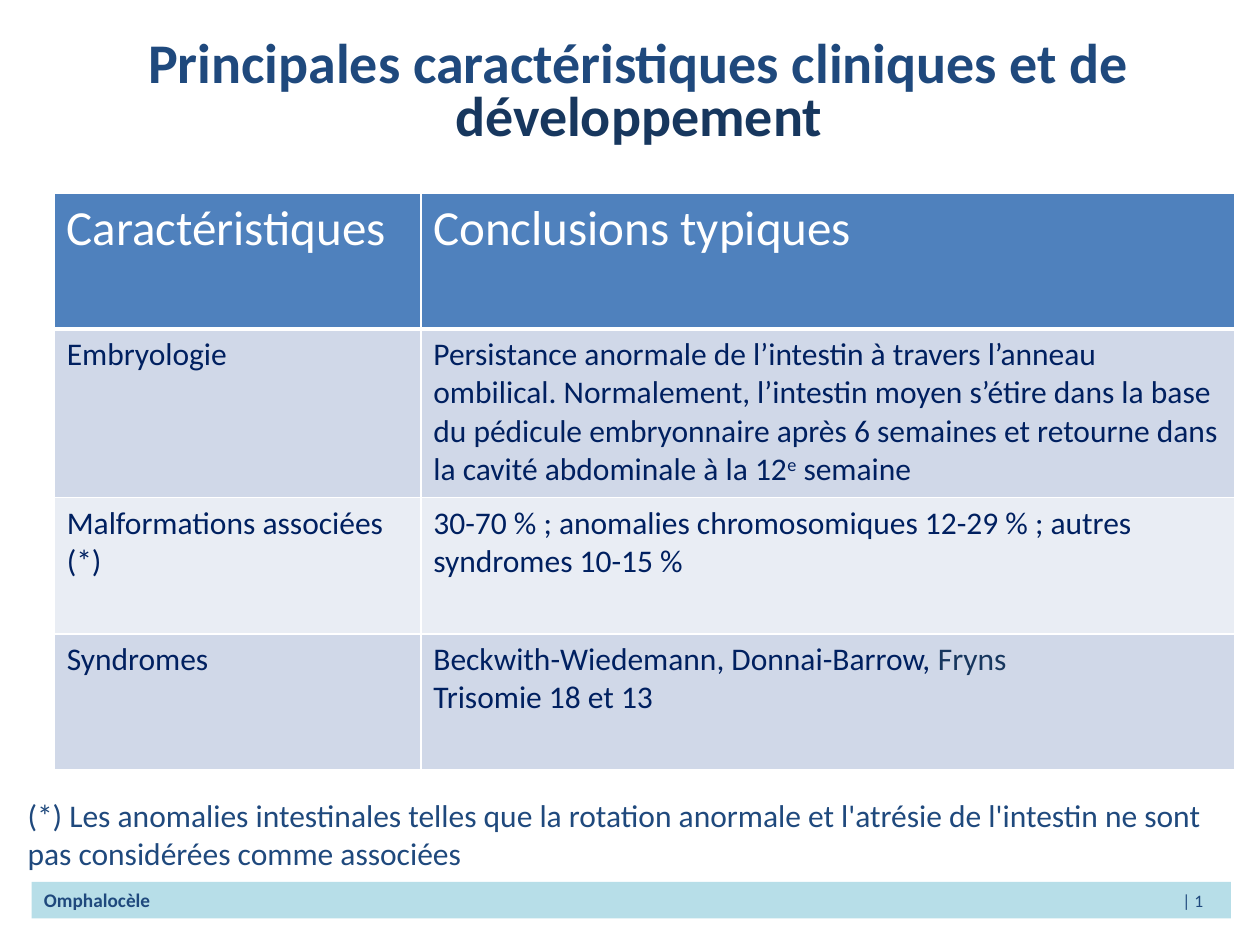
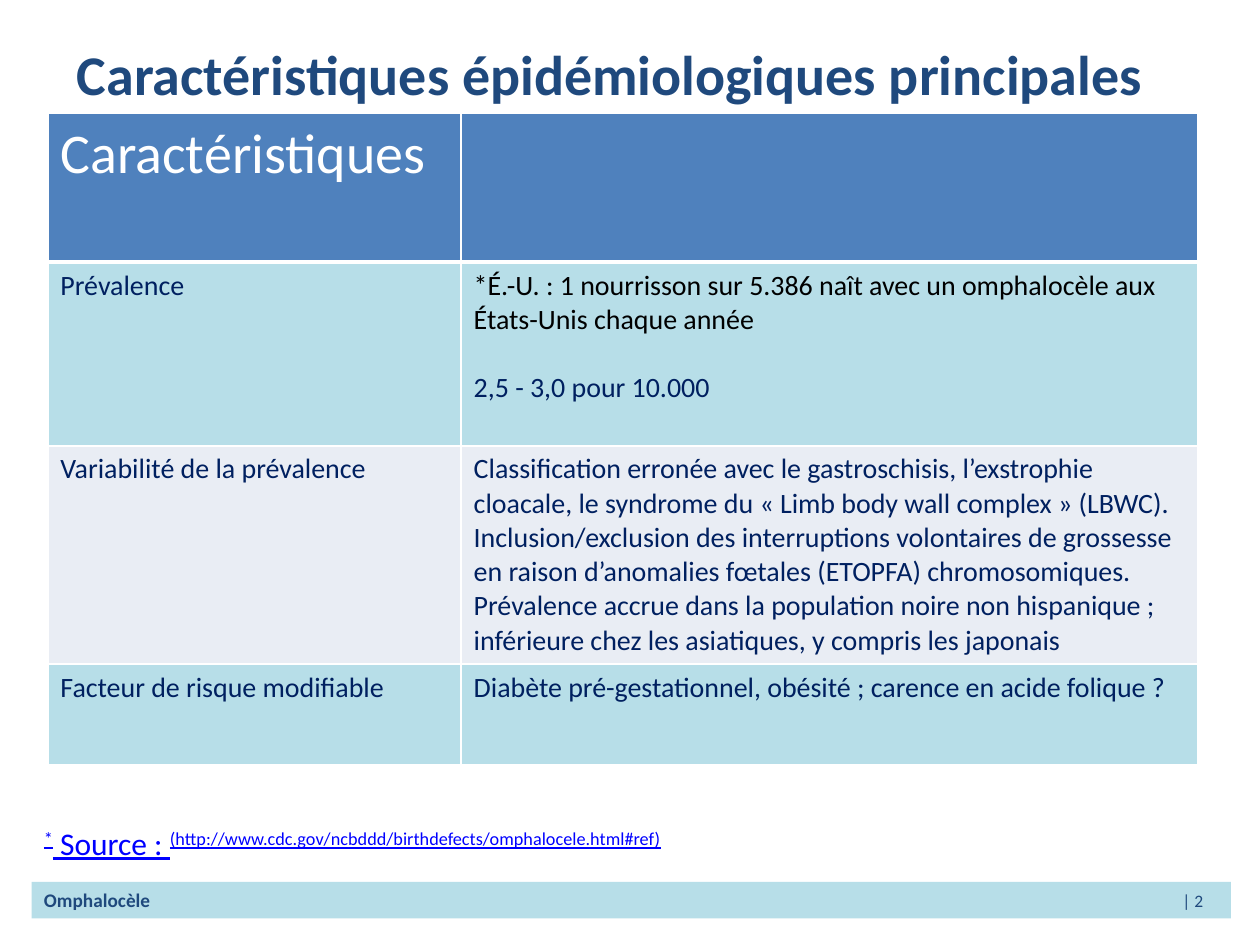
from dataclasses import dataclass
from typing import NamedTuple

from lxml.etree import SubElement as Sub
from pptx import Presentation
from pptx.dml.color import RGBColor
from pptx.enum.shapes import MSO_SHAPE as Shape
from pptx.enum.text import MSO_ANCHOR as Anchor, MSO_AUTO_SIZE as Fit, PP_ALIGN as Align
from pptx.oxml.ns import qn
from pptx.util import Emu, Inches, Pt

WIDE, HIGH = Inches(10), Inches(7.5)
FONT = "Calibri"
BLUE, DARK, NAVY = "1F497D", "17375E", "002060"
HEAD, AQUA, PALE, MIST = "4F81BD", "B7DEE8", "E9EDF4", "D0D8E8"
WHITE, BLACK, LINK = "FFFFFF", "000000", "0000FF"


class Bit(NamedTuple):
    text: str
    color: str = ""  # empty: colour of the block
    up: bool = False


class Box(NamedTuple):
    """Percent of the slide's width and height."""
    left: float
    top: float
    width: float
    height: float


class Style(NamedTuple):
    size: float
    color: str
    bold: bool = False
    line: bool = False


Para = tuple[Bit, ...]


@dataclass
class Grid:
    left: float
    top: float
    cols: tuple[float, ...]
    rows: tuple[float, ...]
    head: float
    body: float
    band: str
    cells: list[list[list[Para]]]
    gap: float = 0  # points between the paragraphs of the first body row


@dataclass
class Page:
    title: Para
    spot: Box
    align: Align
    grid: Grid
    note: Para
    place: Box
    look: Style


def rgb(code: str) -> RGBColor:
    return RGBColor.from_string(code)


def across(share: float) -> Emu:
    return Emu(round(WIDE * share / 100))


def down(share: float) -> Emu:
    return Emu(round(HIGH * share / 100))


def lay(box: Box) -> tuple[Emu, Emu, Emu, Emu]:
    return across(box.left), down(box.top), across(box.width), down(box.height)


def one(text: str, color: str = "") -> list[Para]:
    return [(Bit(text, color),)]


def write(frame, paras: list[Para], style: Style) -> None:
    frame.word_wrap = True
    for i, bits in enumerate(paras):
        para = frame.add_paragraph() if i else frame.paragraphs[0]
        for bit in bits:
            run = para.add_run()
            run.text = bit.text
            font = run.font
            font.name, font.size, font.bold = FONT, Pt(style.size), style.bold
            font.color.rgb = rgb(bit.color or style.color)
            if style.line:
                font.underline = True
            if bit.up:
                run._r.get_or_add_rPr().set("baseline", "30000")


def edge(cell, low: float) -> None:
    """White borders, with the bottom one `low` points wide."""
    props = cell._tc.get_or_add_tcPr()
    for side, width in zip("LRTB", (1, 1, 1, low)):
        line = Sub(props, qn(f"a:ln{side}"), w=str(Pt(width)))
        Sub(Sub(line, qn("a:solidFill")), qn("a:srgbClr"), val=WHITE)


def add_grid(slide, grid: Grid) -> None:
    box = Box(grid.left, grid.top, sum(grid.cols), sum(grid.rows))
    table = slide.shapes.add_table(len(grid.rows), len(grid.cols), *lay(box)).table
    table.first_row = table.horz_banding = False
    for col, share in zip(table.columns, grid.cols):
        col.width = across(share)
    for r, (row, share) in enumerate(zip(table.rows, grid.rows)):
        row.height = down(share)
        style = Style(grid.body, NAVY) if r else Style(grid.head, WHITE)
        tint = (grid.band if r % 2 else PALE if r == 2 else grid.band) if r else HEAD
        for cell, paras in zip(row.cells, grid.cells[r]):
            edge(cell, 1 if r else 3)
            cell.fill.solid()
            cell.fill.fore_color.rgb = rgb(tint)
            write(cell.text_frame, paras, style)
            if r == 1:
                for para in cell.text_frame.paragraphs[1:]:
                    para.space_before = Pt(grid.gap)


def add_foot(slide, num: int) -> None:
    bar = slide.shapes.add_shape(Shape.RECTANGLE, *lay(Box(2.5, 93.33, 95.2, 3.87)))
    bar.shadow.inherit = False
    bar.fill.solid()
    bar.fill.fore_color.rgb = rgb(AQUA)
    bar.line.fill.background()
    para = bar.text_frame.paragraphs[0]
    para.text = f"Omphalocèle\t| {num}"
    para.alignment = Align.LEFT
    tabs = Sub(para._p.get_or_add_pPr(), qn("a:tabLst"))
    Sub(tabs, qn("a:tab"), pos=str(across(92)), algn="r")
    name, mark = para.text.split("\t")
    para.clear()
    write(bar.text_frame, [(Bit(name + "\t"), Bit(mark))], Style(11, BLUE, True))
    last = para.runs[-1].font
    last.size, last.bold = Pt(10), False


def add_title(slide, page: Page) -> None:
    title = slide.shapes.title
    title.left, title.top, title.width, title.height = lay(page.spot)
    frame = title.text_frame
    frame.auto_size, frame.vertical_anchor = Fit.NONE, Anchor.BOTTOM
    write(frame, [page.title], Style(32, BLUE, True))
    para = frame.paragraphs[0]
    para.alignment, para.line_spacing = page.align, Pt(30)


def add_page(deck, page: Page, num: int) -> None:
    slide = deck.slides.add_slide(deck.slide_layouts[5])
    add_foot(slide, num)
    add_title(slide, page)
    add_grid(slide, page.grid)
    note = slide.shapes.add_textbox(*lay(page.place))
    write(note.text_frame, [page.note], page.look)


CLINIC = Grid(4.3, 20.4, (29.1, 64.6), (14.4, 17.87, 14.4, 14.4), 28, 18, MIST, [
    [one("Caractéristiques"), one("Conclusions typiques")],
    [one("Embryologie"),
     [(Bit("Persistance anormale de l’intestin à travers l’anneau ombilical. "
           "Normalement, l’intestin moyen s’étire dans la base du pédicule "
           "embryonnaire après 6 semaines et retourne dans la cavité abdominale "
           "à la 12"), Bit("e", up=True), Bit(" semaine"))]],
    [one("Malformations associées (*)"),
     one("30-70 % ; anomalies chromosomiques 12-29 % ; autres syndromes 10-15 %")],
    [one("Syndromes"),
     [(Bit("Beckwith-Wiedemann, Donnai-Barrow, "), Bit("Fryns", DARK)),
      (Bit("Trisomie 18 et 13"),)]],
])

SPREAD = Grid(3.8, 12, (32.8, 58.5), (15.73, 19.47, 23.07, 10.67), 32, 16, AQUA, [
    [one("Caractéristiques"), []],
    [one("Prévalence"),
     one("*É.-U. : 1 nourrisson sur 5.386 naît avec un omphalocèle aux "
         "États-Unis chaque année", BLACK) + one("2,5 - 3,0 pour 10.000")],
    [one("Variabilité de la prévalence"),
     one("Classification erronée avec le gastroschisis, l’exstrophie cloacale, "
         "le syndrome du « Limb body wall complex » (LBWC). Inclusion/exclusion "
         "des interruptions volontaires de grossesse en raison d’anomalies "
         "fœtales (ETOPFA) chromosomiques.")
     + one("Prévalence accrue dans la population noire non hispanique ; "
           "inférieure chez les asiatiques, y compris les japonais")],
    [one("Facteur de risque modifiable"),
     one("Diabète pré-gestationnel, obésité ; carence en acide folique ?")],
], gap=19.5)

PAGES = [
    Page((Bit("Principales caractéristiques cliniques et de "),
          Bit("développement", DARK)),
         Box(5.7, 8, 90, 8.27), Align.CENTER, CLINIC,
         (Bit("(*) Les anomalies intestinales telles que la rotation anormale et "
              "l'atrésie de l'intestin ne sont pas considérées comme associées"),),
         Box(1.2, 83.6, 96.9, 9.47), Style(18, BLUE)),
    Page((Bit("Caractéristiques épidémiologiques principales"),),
         Box(5.1, 3.87, 90, 8.13), Align.LEFT, SPREAD,
         (Bit("*", up=True), Bit(" Source : "),
          Bit("(http://www.cdc.gov/ncbddd/birthdefects/omphalocele.html#ref)", up=True)),
         Box(2.5, 86.53, 56.9, 5.33), Style(18, LINK, line=True)),
]


def main() -> None:
    deck = Presentation()
    deck.slide_width, deck.slide_height = WIDE, HIGH
    for num, page in enumerate(PAGES, 1):
        add_page(deck, page, num)
    deck.save("out.pptx")


if __name__ == "__main__":
    main()
